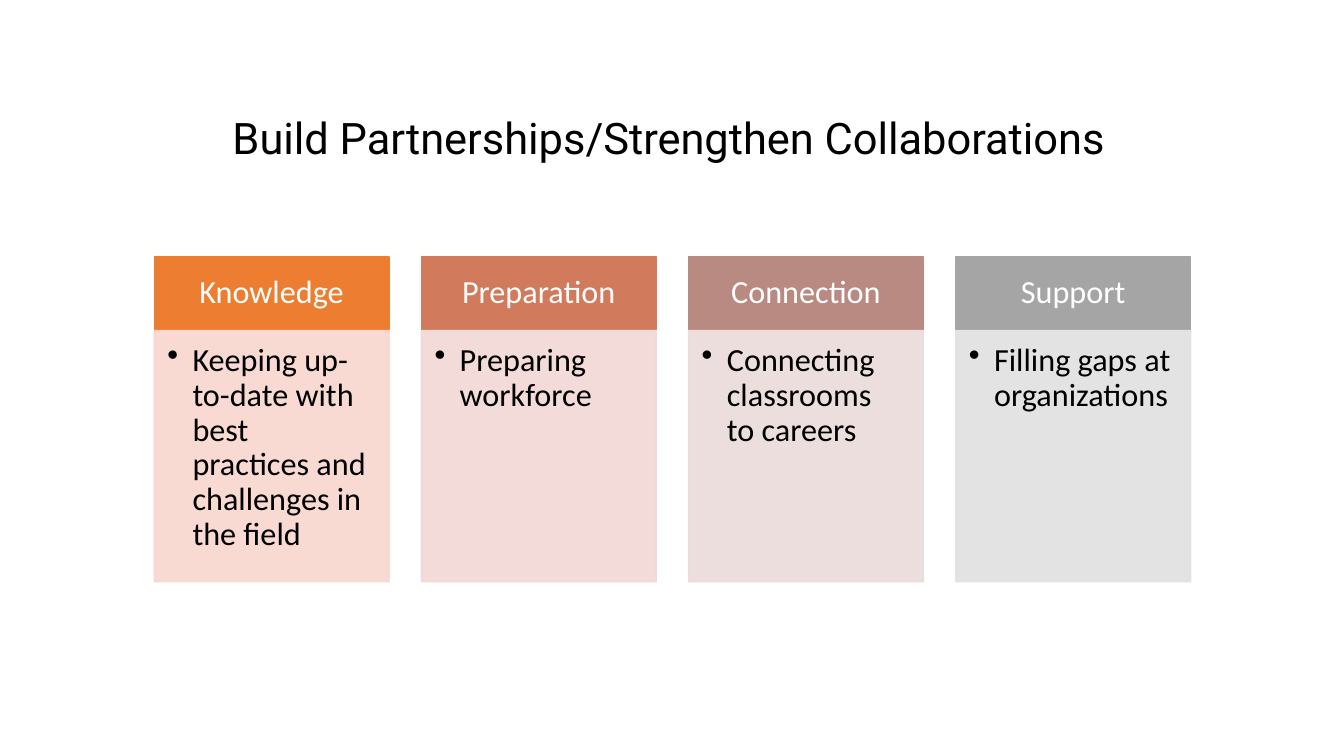
from lxml import etree
from pptx import Presentation
from pptx.dml.color import RGBColor
from pptx.enum.shapes import MSO_SHAPE
from pptx.enum.text import MSO_ANCHOR, PP_ALIGN
from pptx.oxml.ns import qn
from pptx.util import Inches, Pt

RECT = MSO_SHAPE.RECTANGLE
TOP, MIDDLE, BOTTOM = MSO_ANCHOR.TOP, MSO_ANCHOR.MIDDLE, MSO_ANCHOR.BOTTOM
LEFT, CENTER = PP_ALIGN.LEFT, PP_ALIGN.CENTER

BLACK = RGBColor(0x00, 0x00, 0x00)
WHITE = RGBColor(0xFF, 0xFF, 0xFF)
ORANGE = RGBColor(0xED, 0x7D, 0x31)
RUST = RGBColor(0xD1, 0x7B, 0x5C)
ROSE = RGBColor(0xB9, 0x8A, 0x82)
GRAY = RGBColor(0xA5, 0xA5, 0xA5)
PALE_ORANGE = RGBColor(0xF8, 0xD7, 0xCE)
PALE_RUST = RGBColor(0xF1, 0xD8, 0xD4)
PALE_ROSE = RGBColor(0xE9, 0xDB, 0xDA)
PALE_GRAY = RGBColor(0xE1, 0xE1, 0xE1)

# Heading, heading colour, body text, body colour
COLUMNS = [
    ("Knowledge", ORANGE,
     "Keeping up-to-date with best practices and challenges in the field", PALE_ORANGE),
    ("Preparation", RUST, "Preparing workforce", PALE_RUST),
    ("Connection", ROSE, "Connecting classrooms to careers", PALE_ROSE),
    ("Support", GRAY, "Filling gaps at organizations", PALE_GRAY),
]
COLUMN_LEFT, COLUMN_STEP, COLUMN_WIDTH = 1.53, 2.65, 2.33
HEAD_TOP, HEAD_HEIGHT = 2.55, 0.72
BODY_TOP, BODY_HEIGHT = 3.28, 2.49

TITLE_TEXT = dict(font="Roboto", size=31, color=BLACK, align=CENTER,
                  anchor=BOTTOM, insets=(0.1, 0.05, 0.1, 0.05))
HEAD_TEXT = dict(font="Calibri", size=23, color=WHITE, align=CENTER,
                 anchor=MIDDLE, insets=(0.18, 0.1, 0.18, 0.1))
BODY_TEXT = dict(font="Calibri", size=23, color=BLACK, align=LEFT,
                 anchor=TOP, insets=(0.13, 0.13, 0.18, 0.2))


def add_bullet(p):
    pPr = p._p.get_or_add_pPr()
    pPr.set("marL", str(Inches(0.25)))
    pPr.set("indent", str(-Inches(0.25)))
    etree.SubElement(pPr, qn("a:buChar")).set("char", "•")


def set_text(shape, text, font, size, color, align, anchor, insets, bullet=False):
    tf = shape.text_frame
    tf.word_wrap = True
    tf.vertical_anchor = anchor
    for side, inset in zip(("left", "top", "right", "bottom"), insets):
        setattr(tf, f"margin_{side}", Inches(inset))
    p = tf.paragraphs[0]
    if bullet:
        add_bullet(p)
    p.alignment = align
    p.line_spacing = 0.9
    r = p.add_run()
    r.text = text
    for name, value in {"name": font, "size": Pt(size)}.items():
        setattr(r.font, name, value)
    r.font.color.rgb = color


def add_panel(s, left, top, width, height, color, opacity=100):
    sp = s.shapes.add_shape(RECT, Inches(left), Inches(top), Inches(width), Inches(height))
    sp.shadow.inherit = False
    sp.line.width = Pt(1)
    sp.fill.solid()
    sp.fill.fore_color.rgb = color
    sp.line.color.rgb = color
    if opacity < 100:
        for clr in sp._element.spPr.iter(qn("a:srgbClr")):
            etree.SubElement(clr, qn("a:alpha")).set("val", str(opacity * 1000))
    return sp


def add_title(s, text):
    sp = s.shapes.add_textbox(Inches(1.17), Inches(0.56), Inches(10.92), Inches(1.12))
    set_text(sp, text, **TITLE_TEXT)


def add_column(s, left, heading, head_color, body, body_color):
    head = add_panel(s, left, HEAD_TOP, COLUMN_WIDTH, HEAD_HEIGHT, head_color)
    set_text(head, heading, **HEAD_TEXT)
    panel = add_panel(s, left, BODY_TOP, COLUMN_WIDTH, BODY_HEIGHT, body_color, opacity=90)
    set_text(panel, body, bullet=True, **BODY_TEXT)


def main():
    prs = Presentation()
    prs.slide_width, prs.slide_height = Inches(13.33), Inches(7.5)
    s = prs.slides.add_slide(prs.slide_layouts[6])

    # Title
    add_title(s, "Build Partnerships/Strengthen Collaborations")

    # Four columns at equal steps
    for i, column in enumerate(COLUMNS):
        add_column(s, COLUMN_LEFT + i * COLUMN_STEP, *column)

    prs.save("out.pptx")


if __name__ == "__main__":
    main()
